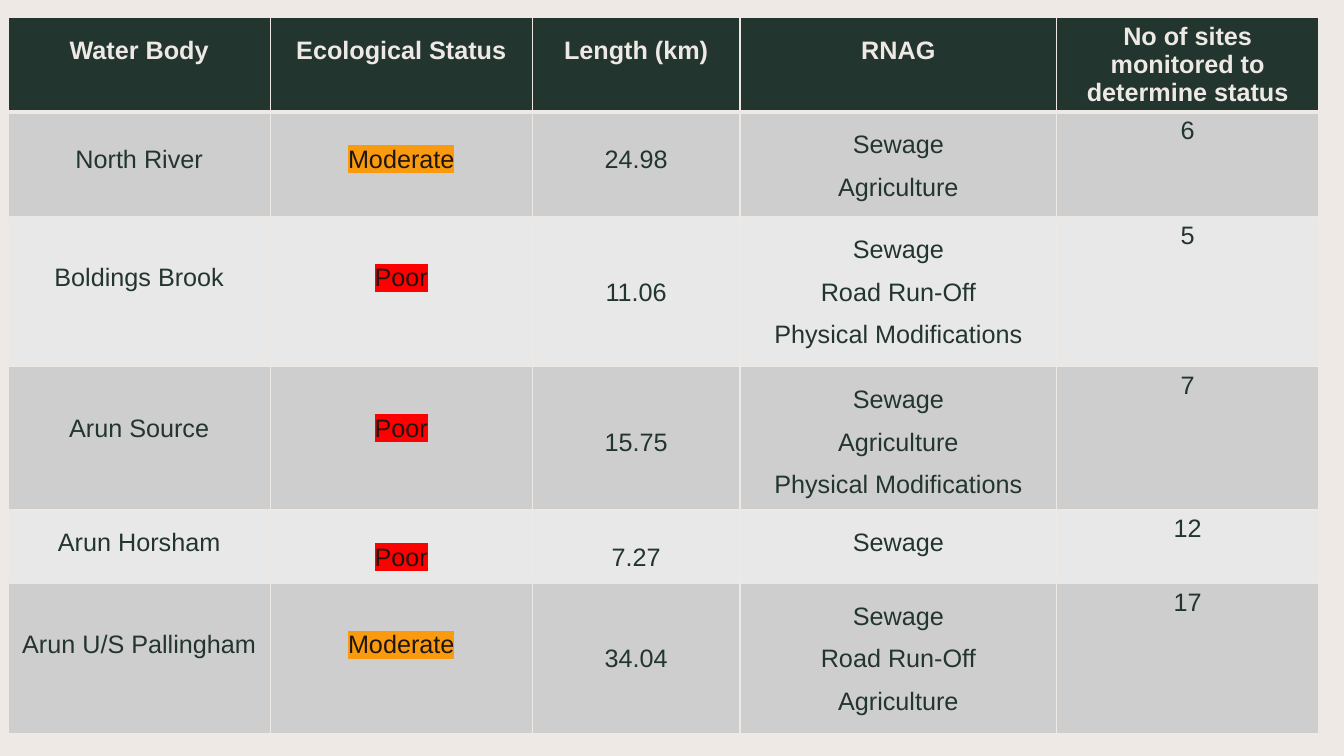
from dataclasses import dataclass

from lxml.etree import SubElement
from pptx import Presentation
from pptx.dml.color import RGBColor
from pptx.enum.text import PP_ALIGN
from pptx.oxml import parse_xml
from pptx.oxml.ns import nsdecls, qn
from pptx.table import _Cell as Cell
from pptx.util import Emu, Pt

PX = 9144  # EMU per px, 100 px to the inch
CREAM, GREEN, INK = "EFE9E6", "23352F", "1D1612"
BANDS = ("CDCECD", "E8E8E8")
STATUS_COLORS = {"Moderate": "FA9A0E", "Poor": "FF0000"}
COL_WIDTHS = (260, 260, 206, 314, 260)
HEADER_HEIGHT = 90
HEADINGS = (
    ("Water Body", 1.5),
    ("Ecological Status", 1.5),
    ("Length (km)", 1.5),
    ("RNAG", 1.5),
    ("No of sites monitored to determine status", 1.0),
)


@dataclass(frozen=True)
class WaterBody:
    name: str
    status: str
    length: str
    reasons: tuple[str, ...]
    sites: int
    height: int
    spacings: tuple[float, float, float]  # name, status, length


WATER_BODIES = (
    WaterBody("North River", "Moderate", "24.98", ("Sewage", "Agriculture"),
              6, 104, (2.0, 2.0, 2.0)),
    WaterBody("Boldings Brook", "Poor", "11.06",
              ("Sewage", "Road Run-Off", "Physical Modifications"),
              5, 149, (2.5, 2.5, 3.0)),
    WaterBody("Arun Source", "Poor", "15.75",
              ("Sewage", "Agriculture", "Physical Modifications"),
              7, 142, (2.5, 2.5, 3.0)),
    WaterBody("Arun Horsham", "Poor", "7.27", ("Sewage",),
              12, 73, (1.5, 2.0, 2.0)),
    WaterBody("Arun U/S Pallingham", "Moderate", "34.04",
              ("Sewage", "Road Run-Off", "Agriculture"),
              17, 149, (2.5, 2.5, 3.0)),
)


def px(n: int) -> Emu:
    return Emu(n * PX)


def rgb(color: str) -> RGBColor:
    return RGBColor.from_string(color)


def set_borders(cell: Cell, top: int = 1, bottom: int = 1) -> None:
    """Draw cream borders; widths are in points."""
    tc_pr = cell._tc.get_or_add_tcPr()
    for side, width in (("L", 1), ("R", 1), ("T", top), ("B", bottom)):
        ln = SubElement(tc_pr, qn(f"a:ln{side}"), w=str(Pt(width)))
        fill = SubElement(ln, qn("a:solidFill"))
        SubElement(fill, qn("a:srgbClr"), val=CREAM)


def write_cell(cell: Cell, lines: tuple[str, ...], spacing: float, color: str,
               bold: bool = False, highlight: str | None = None) -> None:
    tf = cell.text_frame
    for i, line in enumerate(lines):
        p = tf.add_paragraph() if i else tf.paragraphs[0]
        p.alignment = PP_ALIGN.CENTER
        p.line_spacing = spacing
        r = p.add_run()
        r.text = line
        r.font.size = Pt(18)
        r.font.bold = bold
        r.font.name = "Arial"
        r.font.color.rgb = rgb(color)
        if highlight:
            mark = parse_xml(f'<a:highlight {nsdecls("a")}>'
                             f'<a:srgbClr val="{highlight}"/></a:highlight>')
            r.font._element.find(qn("a:solidFill")).addnext(mark)


def fill_cell(cell: Cell, color: str) -> None:
    cell.fill.solid()
    cell.fill.fore_color.rgb = rgb(color)


def main() -> None:
    prs = Presentation()
    prs.slide_width, prs.slide_height = px(1333), px(750)
    s = prs.slides.add_slide(prs.slide_layouts[6])
    s.background.fill.solid()
    s.background.fill.fore_color.rgb = rgb(CREAM)

    heights = (HEADER_HEIGHT, *(body.height for body in WATER_BODIES))
    table = s.shapes.add_table(len(heights), len(COL_WIDTHS), px(8), px(17),
                               px(sum(COL_WIDTHS)), px(sum(heights))).table
    table.first_row = table.horz_banding = False
    for column, width in zip(table.columns, COL_WIDTHS):
        column.width = px(width)
    for row, height in zip(table.rows, heights):
        row.height = px(height)

    for col, (heading, spacing) in enumerate(HEADINGS):
        cell = table.cell(0, col)
        set_borders(cell, bottom=3)
        fill_cell(cell, GREEN)
        write_cell(cell, (heading,), spacing, CREAM, bold=True)

    for row, body in enumerate(WATER_BODIES, start=1):
        cells = [table.cell(row, col) for col in range(len(COL_WIDTHS))]
        for cell in cells:
            set_borders(cell, top=3 if row == 1 else 1)
            fill_cell(cell, BANDS[(row - 1) % 2])
        name, status, length, reasons, sites = cells
        name_gap, status_gap, length_gap = body.spacings
        write_cell(name, (body.name,), name_gap, GREEN)
        write_cell(status, (body.status,), status_gap, INK,
                   highlight=STATUS_COLORS[body.status])
        write_cell(length, (body.length,), length_gap, GREEN)
        write_cell(reasons, body.reasons, 1.5, GREEN)
        write_cell(sites, (str(body.sites),), 1.0, GREEN)

    prs.save("out.pptx")


if __name__ == "__main__":
    main()
